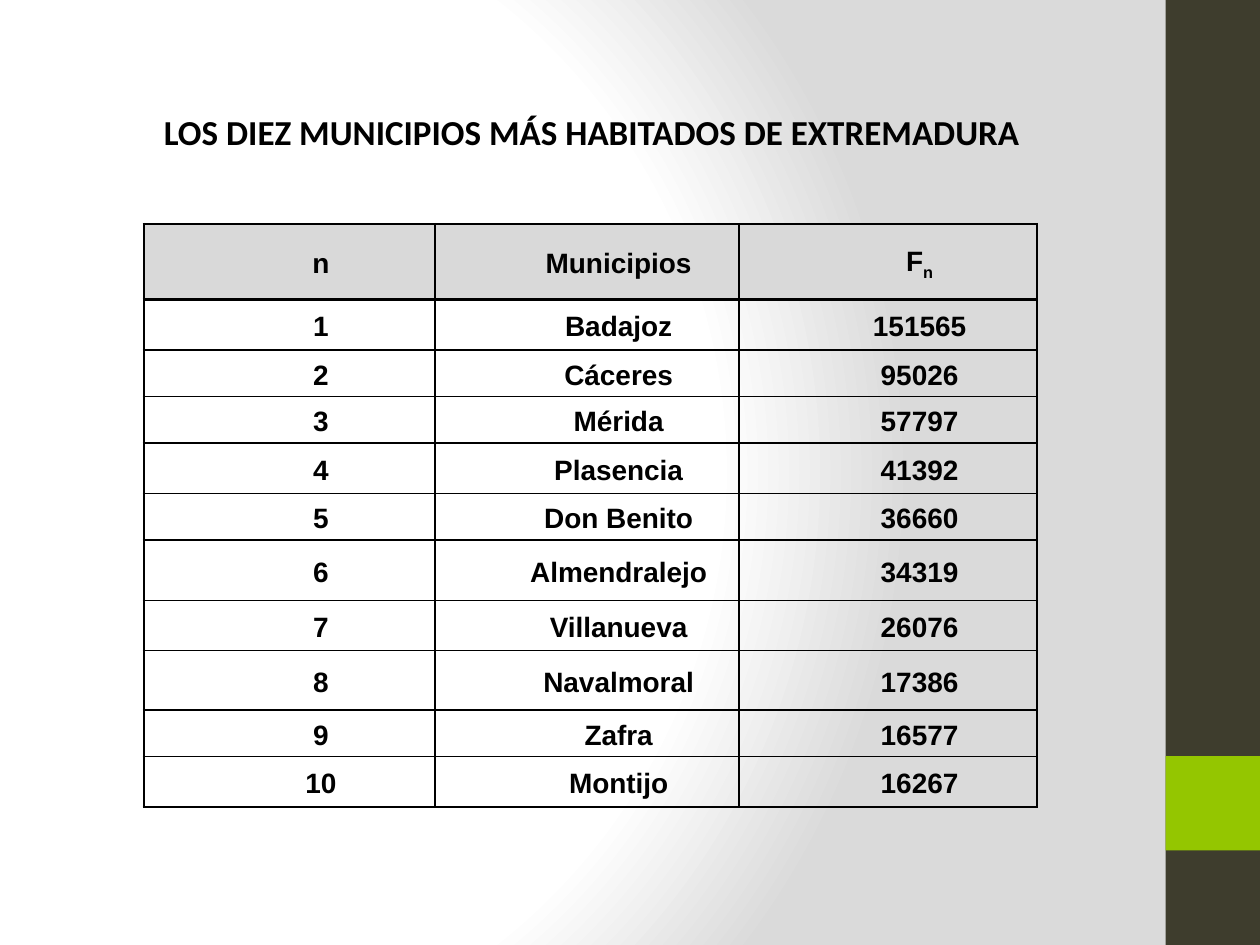
import pptx
import pptx.dml.color
import pptx.enum.shapes
import pptx.enum.text
import pptx.oxml
import pptx.oxml.ns
import pptx.util

BLACK = pptx.dml.color.RGBColor(0x00, 0x00, 0x00)
HEADER_GRAY = pptx.dml.color.RGBColor(0xD9, 0xD9, 0xD9)
DARK_OLIVE = pptx.dml.color.RGBColor(0x3E, 0x3D, 0x2D)
GREEN = pptx.dml.color.RGBColor(0x94, 0xC6, 0x00)
WHITE = pptx.dml.color.RGBColor(0xFF, 0xFF, 0xFF)
LIGHT_GRAY = pptx.dml.color.RGBColor(0xDA, 0xDA, 0xDA)

SLIDE_WIDTH = pptx.util.Inches(10)
SLIDE_HEIGHT = pptx.util.Inches(7.5)
NO_STYLE = "{2D5ABB26-0587-4C30-8999-92F81FD0307C}"

COLUMN_WEIGHTS = (2.31, 2.41, 2.36)
ROW_WEIGHTS = (0.6, 0.4, 0.37, 0.37, 0.4, 0.37, 0.48, 0.4, 0.47, 0.37, 0.4)
MUNICIPALITIES = (
    ("Badajoz", 151565),
    ("Cáceres", 95026),
    ("Mérida", 57797),
    ("Plasencia", 41392),
    ("Don Benito", 36660),
    ("Almendralejo", 34319),
    ("Villanueva", 26076),
    ("Navalmoral", 17386),
    ("Zafra", 16577),
    ("Montijo", 16267),
)


def share_box(left, top, width, height):
    return (int(left * SLIDE_WIDTH), int(top * SLIDE_HEIGHT),
            int(width * SLIDE_WIDTH), int(height * SLIDE_HEIGHT))


def paint_background(slide):
    stops = "".join(
        f'<a:gs pos="{position}"><a:srgbClr val="{color}"/></a:gs>'
        for position, color in ((0, WHITE), (75000, WHITE), (100000, LIGHT_GRAY)))
    background = pptx.oxml.parse_xml(
        f'<p:bg {pptx.oxml.ns.nsdecls("p", "a")}><p:bgPr><a:gradFill rotWithShape="1">'
        f'<a:gsLst>{stops}</a:gsLst><a:path path="circle">'
        '<a:fillToRect l="20000" t="50000" r="100000" b="50000"/></a:path>'
        '</a:gradFill><a:effectLst/></p:bgPr></p:bg>')
    slide.element.cSld.insert(0, background)


def add_block(slide, box, color):
    shape = slide.shapes.add_shape(pptx.enum.shapes.MSO_SHAPE.RECTANGLE, *box)
    shape.shadow.inherit = False
    shape.fill.solid()
    shape.fill.fore_color.rgb = color
    shape.line.fill.background()


def add_sidebar(slide, box):
    left, top, width, height = box
    add_block(slide, box, DARK_OLIVE)
    add_block(slide, (left, top + int(height * 0.8), width, height // 10), GREEN)


def style_paragraph(paragraph, name, size, alignment):
    paragraph.alignment = alignment
    paragraph.font.name = name
    paragraph.font.size = pptx.util.Pt(size)
    paragraph.font.bold = True
    paragraph.font.color.rgb = BLACK


def place_title(slide, box):
    title = slide.shapes.title
    title.left, title.top, title.width, title.height = box
    frame = title.text_frame
    frame.text = "LOS DIEZ MUNICIPIOS MÁS HABITADOS DE EXTREMADURA"
    frame.word_wrap = True
    frame.auto_size = pptx.enum.text.MSO_AUTO_SIZE.NONE
    frame.vertical_anchor = pptx.enum.text.MSO_ANCHOR.TOP
    style_paragraph(frame.paragraphs[0], "Calibri", 20, pptx.enum.text.PP_ALIGN.LEFT)


def set_borders(cell, top, bottom):
    properties = cell._tc.get_or_add_tcPr()
    for side, points in (("L", 1.5), ("R", 1.5), ("T", top), ("B", bottom)):
        properties.append(pptx.oxml.parse_xml(
            f'<a:ln{side} {pptx.oxml.ns.nsdecls("a")} w="{pptx.util.Pt(points)}">'
            f'<a:solidFill><a:srgbClr val="{BLACK}"/></a:solidFill></a:ln{side}>'))


def format_cell(cell):
    cell.margin_left = cell.margin_right = pptx.util.Inches(0.07)
    cell.margin_top = cell.margin_bottom = 0
    cell.vertical_anchor = pptx.enum.text.MSO_ANCHOR.MIDDLE
    paragraph = cell.text_frame.paragraphs[0]
    style_paragraph(paragraph, "Arial", 16, pptx.enum.text.PP_ALIGN.CENTER)
    paragraph.line_spacing = 1.15
    indent = paragraph._p.get_or_add_pPr()
    indent.set("marL", str(pptx.util.Inches(0.5)))
    indent.set("indent", "0")


def add_population_table(slide, box):
    width, height = box[2:]
    rows = [("n", "Municipios", "F")]
    rows += [(number, *entry) for number, entry in enumerate(MUNICIPALITIES, 1)]
    last = len(rows) - 1
    frame = slide.shapes.add_table(len(rows), len(COLUMN_WEIGHTS), *box)
    table = frame.table
    table._tbl.tblPr.find(pptx.oxml.ns.qn("a:tableStyleId")).text = NO_STYLE
    table.horz_banding = False
    for column, weight in zip(table.columns, COLUMN_WEIGHTS):
        column.width = int(width * weight / sum(COLUMN_WEIGHTS))
    for row, weight in zip(table.rows, ROW_WEIGHTS):
        row.height = int(height * weight / sum(ROW_WEIGHTS))
    for row_index, values in enumerate(rows):
        for column_index, value in enumerate(values):
            cell = table.cell(row_index, column_index)
            cell.text = str(value)
            format_cell(cell)
            set_borders(cell, 1.5 if row_index <= 1 else 1,
                        1.5 if row_index in (0, last) else 1)
            if row_index == 0:
                cell.fill.solid()
                cell.fill.fore_color.rgb = HEADER_GRAY
            else:
                cell.fill.background()
    subscript = table.cell(0, 2).text_frame.paragraphs[0].add_run()
    subscript.text = "n"
    subscript.font._element.set("baseline", "-25000")


def main():
    presentation = pptx.Presentation()
    presentation.slide_width = SLIDE_WIDTH
    presentation.slide_height = SLIDE_HEIGHT
    slide = presentation.slides.add_slide(presentation.slide_layouts[5])
    paint_background(slide)
    add_sidebar(slide, share_box(0.925, 0, 0.075, 1))
    place_title(slide, share_box(0.12, 0.11, 0.8, 0.1))
    add_population_table(slide, share_box(0.114, 0.237, 0.709, 0.617))
    presentation.save("out.pptx")


if __name__ == "__main__":
    main()
